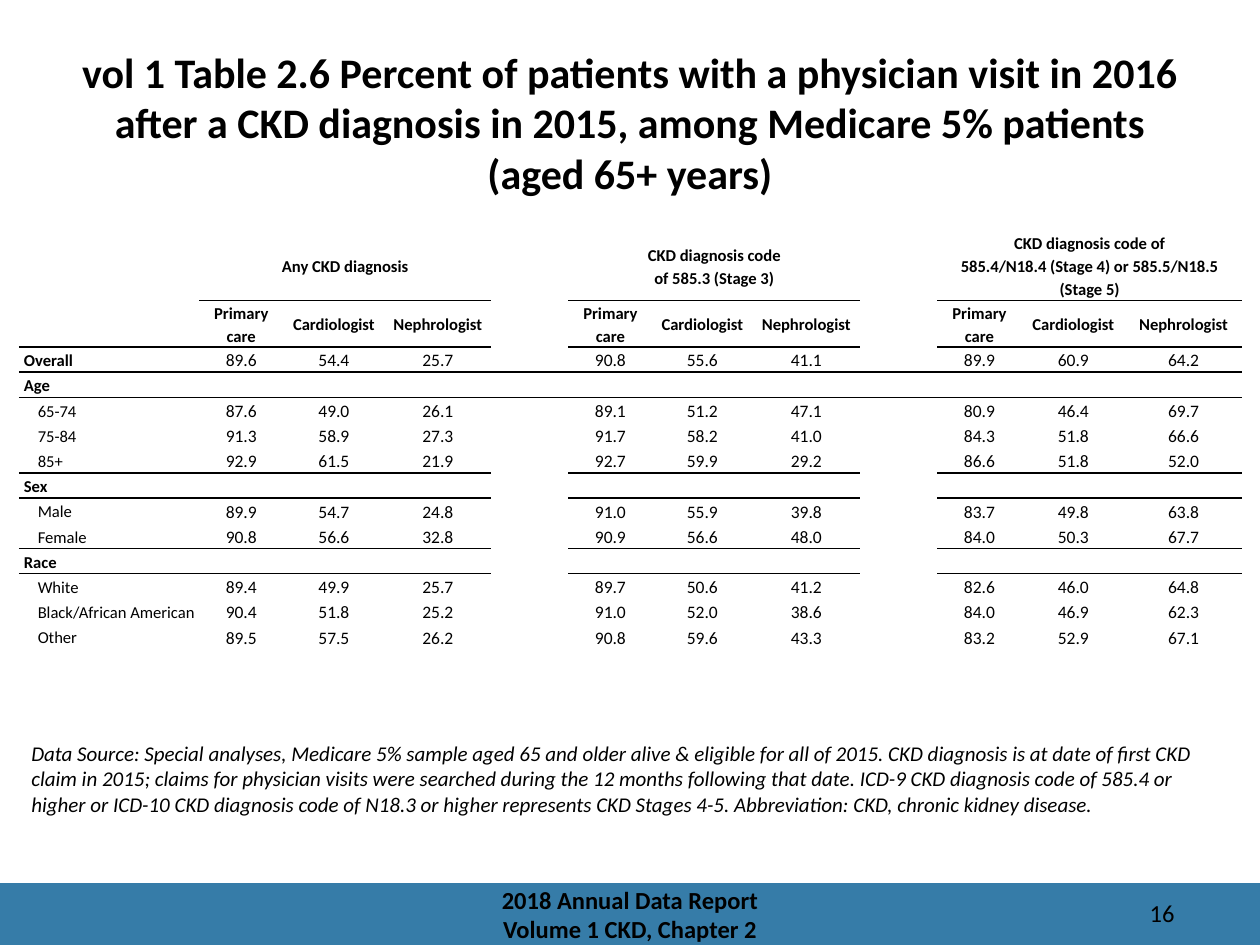
from dataclasses import dataclass

from lxml.etree import SubElement
from pptx import Presentation
from pptx.dml.color import RGBColor
from pptx.enum.shapes import MSO_SHAPE
from pptx.enum.text import MSO_ANCHOR, PP_ALIGN
from pptx.oxml.ns import qn
from pptx.slide import Slide
from pptx.table import Table, _Cell
from pptx.text.text import TextFrame, _Paragraph
from pptx.util import Inches, Pt

COLORS = {"text": "000000", "band": "367CA8"}
FONT = "Calibri"
NO_STYLE_NO_GRID = "{2D5ABB26-0587-4C30-8999-92F81FD0307C}"
LABEL_SIZE, VALUE_SIZE = 9.5, 10

COLUMN_WIDTHS = [1.43, 0.67, 0.8, 0.85, 0.61, 0.67, 0.79, 0.86, 0.61, 0.67, 0.82, 0.93]
HEADER_HEIGHTS, BODY_HEIGHT = [0.41, 0.37], 0.2
GROUP_STARTS = [1, 5, 9]
GAP_COLUMNS = {4, 8}
GROUP_TITLES = [
    ["Any CKD diagnosis"],
    ["CKD diagnosis code", "of 585.3 (Stage 3)"],
    ["CKD diagnosis code of", "585.4/N18.4 (Stage 4) or 585.5/N18.5 (Stage 5)"],
]
PHYSICIANS = ["Primary care", "Cardiologist", "Nephrologist"]


@dataclass
class TextStyle:
    size: float
    bold: bool = False
    italic: bool = False
    align: PP_ALIGN = PP_ALIGN.LEFT


@dataclass
class VisitRow:
    label: str
    values: str = ""
    heading: bool = False


@dataclass
class TextBlock:
    left: float
    top: float
    width: float
    height: float
    lines: list[str]
    style: TextStyle
    centered_vertically: bool = False


VISIT_ROWS = [
    VisitRow("Overall", "89.6 54.4 25.7 90.8 55.6 41.1 89.9 60.9 64.2", heading=True),
    VisitRow("Age", heading=True),
    VisitRow("65-74", "87.6 49.0 26.1 89.1 51.2 47.1 80.9 46.4 69.7"),
    VisitRow("75-84", "91.3 58.9 27.3 91.7 58.2 41.0 84.3 51.8 66.6"),
    VisitRow("85+", "92.9 61.5 21.9 92.7 59.9 29.2 86.6 51.8 52.0"),
    VisitRow("Sex", heading=True),
    VisitRow("Male", "89.9 54.7 24.8 91.0 55.9 39.8 83.7 49.8 63.8"),
    VisitRow("Female", "90.8 56.6 32.8 90.9 56.6 48.0 84.0 50.3 67.7"),
    VisitRow("Race", heading=True),
    VisitRow("White", "89.4 49.9 25.7 89.7 50.6 41.2 82.6 46.0 64.8"),
    VisitRow("Black/African American", "90.4 51.8 25.2 91.0 52.0 38.6 84.0 46.9 62.3"),
    VisitRow("Other", "89.5 57.5 26.2 90.8 59.6 43.3 83.2 52.9 67.1"),
]

# Columns underlined below each ruled row
ALL_COLUMNS = set(range(len(COLUMN_WIDTHS)))
DATA_COLUMNS = ALL_COLUMNS - GAP_COLUMNS
RULES = {0: DATA_COLUMNS - {0}, 1: DATA_COLUMNS, 2: ALL_COLUMNS, 6: DATA_COLUMNS, 9: DATA_COLUMNS}

TEXT_BLOCKS = [
    # Title
    TextBlock(0.46, 0.32, 9.08, 1.25,
              ["vol 1 Table 2.6 Percent of patients with a physician visit in 2016 after a CKD "
               "diagnosis in 2015, among Medicare 5% patients (aged 65+ years)"],
              TextStyle(24, bold=True, align=PP_ALIGN.CENTER)),
    # Data source
    TextBlock(0.15, 5.83, 9.71, 0.71,
              ["Data Source: Special analyses, Medicare 5% sample aged 65 and older alive & eligible "
               "for all of 2015. CKD diagnosis is at date of first CKD claim in 2015; claims for "
               "physician visits were searched during the 12 months following that date. ICD-9 CKD "
               "diagnosis code of 585.4 or higher or ICD-10 CKD diagnosis code of N18.3 or higher "
               "represents CKD Stages 4-5. Abbreviation: CKD, chronic kidney disease."],
              TextStyle(12, italic=True)),
    # Footer and slide number
    TextBlock(3.31, 7.01, 3.38, 0.49, ["2018 Annual Data Report", "Volume 1 CKD, Chapter 2"],
              TextStyle(14, bold=True, align=PP_ALIGN.CENTER), centered_vertically=True),
    TextBlock(8.42, 7.08, 1, 0.3, ["16"], TextStyle(14, align=PP_ALIGN.RIGHT)),
]


def add_run(paragraph: _Paragraph, text: str, style: TextStyle) -> None:
    paragraph.alignment = style.align
    run = paragraph.add_run()
    run.text = text
    run.font.name = FONT
    run.font.size = Pt(style.size)
    run.font.bold = style.bold
    run.font.italic = style.italic
    run.font.color.rgb = RGBColor.from_string(COLORS["text"])


def write_lines(frame: TextFrame, lines: list[str], style: TextStyle) -> None:
    for index, line in enumerate(lines):
        paragraph = frame.add_paragraph() if index else frame.paragraphs[0]
        add_run(paragraph, line, style)


def add_text_block(slide: Slide, block: TextBlock) -> None:
    shape = slide.shapes.add_textbox(Inches(block.left), Inches(block.top),
                                     Inches(block.width), Inches(block.height))
    frame = shape.text_frame
    frame.word_wrap = True
    if block.centered_vertically:
        frame.vertical_anchor = MSO_ANCHOR.MIDDLE
        frame.margin_top = frame.margin_bottom = 0
    write_lines(frame, block.lines, block.style)


def add_footer_band(slide: Slide) -> None:
    band = slide.shapes.add_shape(MSO_SHAPE.RECTANGLE, 0, Inches(7.01), Inches(10), Inches(0.49))
    band.shadow.inherit = False
    band.fill.solid()
    band.fill.fore_color.rgb = RGBColor.from_string(COLORS["band"])
    band.line.fill.background()


def add_border(cell: _Cell, side: str) -> None:
    properties = cell._tc.get_or_add_tcPr()
    line = SubElement(properties, qn(f"a:{side}"), w=str(Pt(1)))
    fill = SubElement(line, qn("a:solidFill"))
    SubElement(fill, qn("a:srgbClr"), val=COLORS["text"])


def format_cell(cell: _Cell, row: int, column: int) -> None:
    if column in RULES.get(row - 1, set()):
        add_border(cell, "lnT")
    if column in RULES.get(row, set()):
        add_border(cell, "lnB")
    cell.fill.background()
    cell.vertical_anchor = MSO_ANCHOR.MIDDLE
    cell.margin_left = Inches(0.04)
    cell.margin_right = Inches(0.04 if column else 0)
    cell.margin_top = cell.margin_bottom = 0


def write_cell(cell: _Cell, lines: list[str], style: TextStyle, indent: float = 0) -> None:
    paragraph = cell.text_frame.paragraphs[0]
    paragraph.line_spacing = 1.15
    if indent:
        paragraph._p.get_or_add_pPr().set("marL", str(Inches(indent)))
    for index, line in enumerate(lines):
        if index:
            paragraph.add_line_break()
        add_run(paragraph, line, style)


def fill_table(table: Table) -> None:
    header_style = TextStyle(LABEL_SIZE, bold=True, align=PP_ALIGN.CENTER)
    value_style = TextStyle(VALUE_SIZE, align=PP_ALIGN.CENTER)
    # Two header rows
    table.cell(0, 0).merge(table.cell(1, 0))
    for start, title in zip(GROUP_STARTS, GROUP_TITLES):
        table.cell(0, start).merge(table.cell(0, start + 2))
        write_cell(table.cell(0, start), title, header_style)
        for offset, physician in enumerate(PHYSICIANS):
            write_cell(table.cell(1, start + offset), [physician], header_style)
    # Body rows
    value_columns = sorted(DATA_COLUMNS - {0})
    for row, visit in enumerate(VISIT_ROWS, start=len(HEADER_HEIGHTS)):
        write_cell(table.cell(row, 0), [visit.label], TextStyle(LABEL_SIZE, bold=visit.heading),
                   indent=0 if visit.heading else 0.11)
        for column, value in zip(value_columns, visit.values.split()):
            write_cell(table.cell(row, column), [value], value_style)


def add_visit_table(slide: Slide) -> None:
    heights = HEADER_HEIGHTS + [BODY_HEIGHT] * len(VISIT_ROWS)
    frame = slide.shapes.add_table(len(heights), len(COLUMN_WIDTHS), Inches(0.15), Inches(1.83),
                                   Inches(sum(COLUMN_WIDTHS)), Inches(sum(heights)))
    table = frame.table
    table.first_row = table.horz_banding = False
    table._tbl.tblPr.find(qn("a:tableStyleId")).text = NO_STYLE_NO_GRID
    for column, width in zip(table.columns, COLUMN_WIDTHS):
        column.width = Inches(width)
    for row, height in zip(table.rows, heights):
        row.height = Inches(height)
    fill_table(table)
    for row in range(len(heights)):
        for column in range(len(COLUMN_WIDTHS)):
            cell = table.cell(row, column)
            format_cell(cell, row, column)
            paragraph = cell.text_frame.paragraphs[0]
            if not paragraph.runs:  # keep empty cells from stretching their row
                SubElement(paragraph._p, qn("a:endParaRPr"), sz=str(Pt(LABEL_SIZE).centipoints))


def main() -> None:
    presentation = Presentation()
    presentation.slide_width, presentation.slide_height = Inches(10), Inches(7.5)
    slide = presentation.slides.add_slide(presentation.slide_layouts[6])
    add_footer_band(slide)
    add_visit_table(slide)
    for block in TEXT_BLOCKS:
        add_text_block(slide, block)
    presentation.save("out.pptx")


if __name__ == "__main__":
    main()
